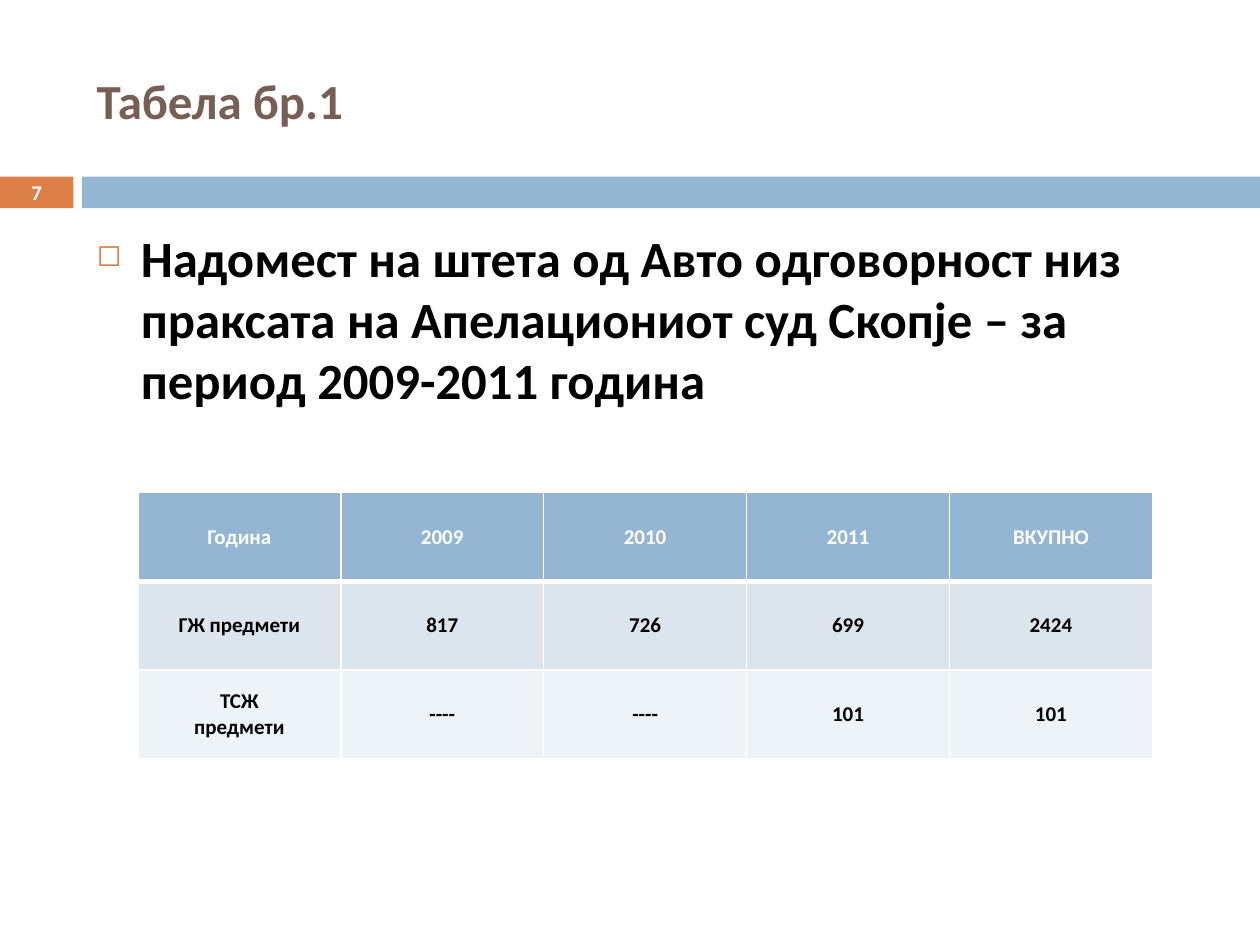
from lxml import etree
from pptx import Presentation
from pptx import util as u
from pptx.dml.color import RGBColor
from pptx.enum import shapes, text
from pptx.oxml import ns

ORANGE = RGBColor(0xDD, 0x80, 0x47)
BLUE = RGBColor(0x94, 0xB6, 0xD2)
BROWN = RGBColor(0x77, 0x5F, 0x55)
BLACK = RGBColor(0, 0, 0)
WHITE = RGBColor(0xFF, 0xFF, 0xFF)
ROW_FILLS = [BLUE, RGBColor(0xDC, 0xE5, 0xEE), RGBColor(0xEE, 0xF3, 0xF7)]

MARGIN, CONTENT_WIDTH = u.Cm(1.7), u.Cm(22.66)
STRIPE_TOP, STRIPE_HEIGHT = u.Cm(3.56), u.Cm(0.64)
NUMBER_WIDTH = u.Cm(1.48)
CASES = [
    ["Година", "2009", "2010", "2011", "ВКУПНО"],
    ["ГЖ предмети", "817", "726", "699", "2424"],
    ["ТСЖ\nпредмети", "----", "----", "101", "101"],
]


def apply(target, formats):
    for attribute, value in formats.items():
        setattr(target, attribute, value)


def style_text(frame, size, color, align):
    for paragraph in frame.paragraphs:
        paragraph.alignment = align
        for run in paragraph.runs:
            apply(run.font, {"name": "Calibri", "size": u.Pt(size), "bold": True})
            run.font.color.rgb = color


def add_stripe(slide, left, width, color):
    stripe = slide.shapes.add_shape(
        shapes.MSO_SHAPE.RECTANGLE, left, STRIPE_TOP, width, STRIPE_HEIGHT)
    stripe.shadow.inherit = False
    stripe.fill.solid()
    stripe.fill.fore_color.rgb = color
    stripe.line.fill.background()
    return stripe


def add_text(slide, box, wording, size, color, anchor):
    frame = slide.shapes.add_textbox(*box).text_frame
    apply(frame, {"text": wording, "word_wrap": True, "vertical_anchor": anchor})
    style_text(frame, size, color, text.PP_ALIGN.LEFT)
    return frame


def add_bullet(paragraph, char, color, percent):
    paragraph.space_before = u.Pt(7)
    properties = paragraph._p.get_or_add_pPr()
    indent = u.Cm(0.89)
    properties.set("marL", str(indent))
    properties.set("indent", str(-indent))
    bullet_color = etree.SubElement(properties, ns.qn("a:buClr"))
    etree.SubElement(bullet_color, ns.qn("a:srgbClr"), val=str(color))
    etree.SubElement(properties, ns.qn("a:buSzPct"), val=str(percent * 1000))
    etree.SubElement(properties, ns.qn("a:buChar"), char=char)


def set_borders(cell, widths):
    properties = cell._tc.get_or_add_tcPr()
    for position, (side, points) in enumerate(widths.items()):
        border = etree.Element(ns.qn(f"a:ln{side}"), w=str(u.Pt(points)))
        fill = etree.SubElement(border, ns.qn("a:solidFill"))
        etree.SubElement(fill, ns.qn("a:srgbClr"), val=str(WHITE))
        properties.insert(position, border)


def add_case_table(slide, left, top, width, height):
    table = slide.shapes.add_table(
        len(CASES), len(CASES[0]), left, top, width, height).table
    cell_format = {
        "vertical_anchor": text.MSO_ANCHOR.MIDDLE,
        "margin_left": u.Cm(0.18), "margin_right": u.Cm(0.18),
        "margin_top": 0, "margin_bottom": 0,
    }
    for row, (values, fill) in enumerate(zip(CASES, ROW_FILLS)):
        for column, value in enumerate(values):
            cell = table.cell(row, column)
            apply(cell, {"text": value, **cell_format})
            cell.fill.solid()
            cell.fill.fore_color.rgb = fill
            style_text(cell.text_frame, 12, BLACK if row else WHITE,
                       text.PP_ALIGN.CENTER)
            set_borders(cell, {"L": 1, "R": 1, "T": 3 if row == 1 else 1,
                               "B": 1 if row else 3})


def main():
    deck = Presentation()
    apply(deck, {"slide_width": u.Cm(25.4), "slide_height": u.Cm(19.05)})
    slide = deck.slides.add_slide(deck.slide_layouts[6])

    page_number = add_stripe(slide, 0, NUMBER_WIDTH, ORANGE).text_frame
    apply(page_number, {
        "text": "7", "vertical_anchor": text.MSO_ANCHOR.MIDDLE,
        "margin_top": 0, "margin_bottom": 0})
    style_text(page_number, 11.9, WHITE, text.PP_ALIGN.CENTER)
    band_left = u.Cm(1.65)
    add_stripe(slide, band_left, deck.slide_width - band_left, BLUE)

    add_text(slide, (MARGIN, u.Cm(0.64), CONTENT_WIDTH, u.Cm(2.74)),
             "Табела бр.1", 28, BROWN, text.MSO_ANCHOR.MIDDLE)
    subject = add_text(
        slide, (MARGIN, u.Cm(4.45), CONTENT_WIDTH, u.Cm(12.5)),
        "Надомест на штета од Авто одговорност низ праксата на "
        "Апелациониот суд Скопје – за период 2009-2011 година",
        29, BLACK, text.MSO_ANCHOR.TOP)
    add_bullet(subject.paragraphs[0], "◻", ORANGE, 60)
    add_case_table(slide, u.Cm(2.78), u.Cm(9.93), u.Cm(20.45), u.Cm(5.36))
    deck.save("out.pptx")


if __name__ == "__main__":
    main()
